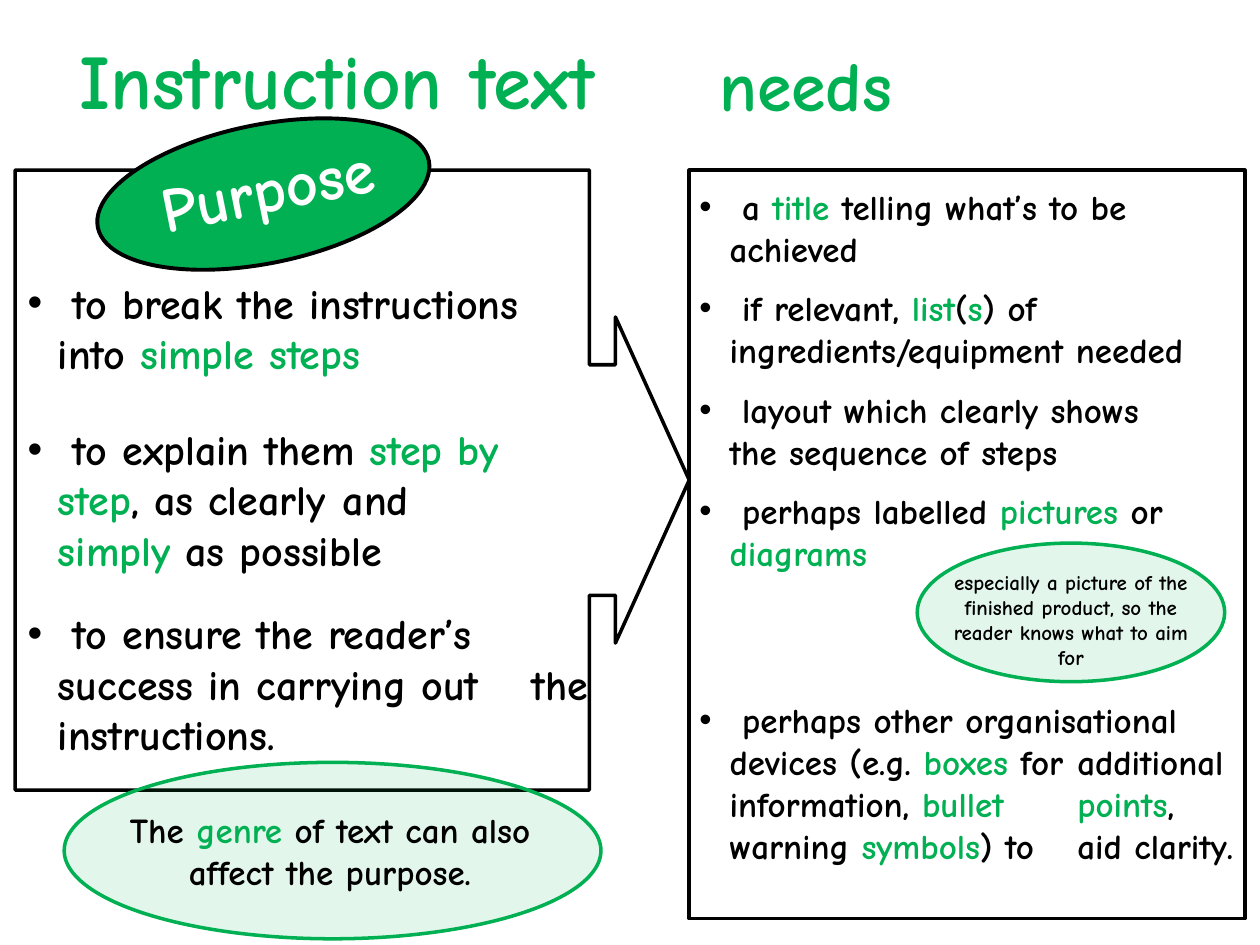
"""Build the slide on the purpose and needs of instruction texts."""
import pptx
import pptx.util
import pptx.dml.color
import pptx.enum.shapes
import pptx.enum.text
import lxml.etree

COLOURS = {"green": "00B052", "black": "000000", "white": "FFFFFF"}
FONT = "Comic Neue"
HANGING = pptx.util.Inches(0.24)
ALIGN = pptx.enum.text.PP_ALIGN
ANCHOR = pptx.enum.text.MSO_ANCHOR
SHAPE = pptx.enum.shapes.MSO_SHAPE

presentation = pptx.Presentation()
presentation.slide_width = pptx.util.Inches(10)
presentation.slide_height = pptx.util.Inches(7.5)
slide = presentation.slides.add_slide(presentation.slide_layouts[3])


def place(shape, area):
    """Set left, top, width and height as percentages of the slide."""
    left, top, width, height = area
    shape.left = int(presentation.slide_width * left / 100)
    shape.top = int(presentation.slide_height * top / 100)
    shape.width = int(presentation.slide_width * width / 100)
    shape.height = int(presentation.slide_height * height / 100)


def write(paragraph, text, size, colour="black", align=ALIGN.LEFT):
    """Write text in which asterisks enclose the green words."""
    paragraph.alignment = align
    paragraph.font.name = FONT
    paragraph.font.size = pptx.util.Pt(size)
    paragraph.font.bold = True
    paragraph.font.color.rgb = pptx.dml.color.RGBColor.from_string(COLOURS[colour])
    for index, piece in enumerate(text.split("*")):
        for row, line in enumerate(piece.split("\n")):
            if row:
                paragraph.add_line_break()
            if line:
                run = paragraph.add_run()
                run.text = line
                if index % 2:
                    run.font.color.rgb = pptx.dml.color.RGBColor.from_string(COLOURS["green"])


title, purposes, needs = slide.placeholders
place(title, (0, 0, 53.5, 16.67))
title.text_frame.vertical_anchor = ANCHOR.MIDDLE
write(title.text_frame.paragraphs[0], "Instruction text", 44, "green", ALIGN.CENTER)

lists = [
    (purposes, (1.2, 28.67, 48, 52.4), 24, (0.1, 0.05), [
        (0, " to break the instructions\ninto *simple steps*"),
        (26, " to explain them *step by\nstep*, as clearly \tand\n*simply *as possible"),
        (19, " to ensure the reader’s\nsuccess in carrying out \tthe\ninstructions."),
    ]),
    (needs, (55.5, 19.6, 43.5, 76.8), 20, (0, 0), [
        (0, " a *title* telling what’s to be\nachieved"),
        (10, " if relevant, *list*(*s*) of\ningredients/equipment needed"),
        (10, " layout which clearly shows\nthe sequence of steps"),
        (10, " perhaps labelled *pictures* or\n*diagrams*"),
        (71, " perhaps other organisational\ndevices (e.g. *boxes* for \tadditional\n"
             "information, *bullet \tpoints*,\nwarning *symbols*) to \taid clarity."),
    ]),
]
for placeholder, area, size, (side, edge), items in lists:
    place(placeholder, area)
    frame = placeholder.text_frame
    frame.auto_size = pptx.enum.text.MSO_AUTO_SIZE.NONE
    frame.margin_left = frame.margin_right = pptx.util.Inches(side)
    frame.margin_top = frame.margin_bottom = pptx.util.Inches(edge)
    for index, (gap, text) in enumerate(items):
        paragraph = frame.add_paragraph() if index else frame.paragraphs[0]
        paragraph.space_before = pptx.util.Pt(gap)
        write(paragraph, text, size)
        properties = paragraph._p.get_or_add_pPr()
        properties.set("marL", str(HANGING))
        properties.set("indent", str(-HANGING))

outlines = [
    (SHAPE.RIGHT_ARROW_CALLOUT, (1.2, 18, 53.5, 65.6), None, "black", 2, 0),
    (SHAPE.RECTANGLE, (54.7, 18, 44.1, 79.2), None, "black", 2, 0),
    (SHAPE.OVAL, (5.1, 80.67, 42.6, 18.67), 11, "green", 2, 0),
    (SHAPE.OVAL, (7.5, 13.2, 26.8, 14.67), 100, "black", 2.25, -11.4),
    (SHAPE.OVAL, (72.8, 57.47, 24.4, 14.67), 11, "green", 2, 0),
]
for kind, area, opacity, line_colour, line_width, rotation in outlines:
    shape = slide.shapes.add_shape(kind, 0, 0, 0, 0)
    place(shape, area)
    shape.rotation = rotation
    shape.shadow.inherit = False
    shape.line.color.rgb = pptx.dml.color.RGBColor.from_string(COLOURS[line_colour])
    shape.line.width = pptx.util.Pt(line_width)
    if kind == SHAPE.RIGHT_ARROW_CALLOUT:
        for index, value in enumerate((0.372, 0.263, 0.119, 0.852)):
            shape.adjustments[index] = value
    if opacity is None:
        shape.fill.background()
        continue
    shape.fill.solid()
    shape.fill.fore_color.rgb = pptx.dml.color.RGBColor.from_string(COLOURS["green"])
    if opacity < 100:
        colour = shape.fill._xPr.find(".//" + pptx.oxml.ns.qn("a:srgbClr"))
        lxml.etree.SubElement(colour, pptx.oxml.ns.qn("a:alpha"), val=str(opacity * 1000))

labels = [
    ("The* genre *of text can also affect the purpose.", (8.5, 84.93, 35.4, 10.27),
     20, "black", ALIGN.CENTER, ANCHOR.TOP, 0),
    ("needs", (56.1, 2.27, 43.9, 13.07), 40, "green", ALIGN.LEFT, ANCHOR.MIDDLE, 0),
    ("Purpose", (9, 15.2, 24.4, 9.33), 36, "white", ALIGN.CENTER, ANCHOR.TOP, -11.4),
    ("especially a picture of the finished product, so the reader knows what to aim for",
     (73.6, 59.6, 22.8, 12), 12, "black", ALIGN.CENTER, ANCHOR.TOP, 0),
]
for text, area, size, colour, align, anchor, rotation in labels:
    label = slide.shapes.add_textbox(0, 0, 0, 0)
    place(label, area)
    label.rotation = rotation
    label.text_frame.word_wrap = True
    label.text_frame.vertical_anchor = anchor
    write(label.text_frame.paragraphs[0], text, size, colour, align)

presentation.save("out.pptx")
